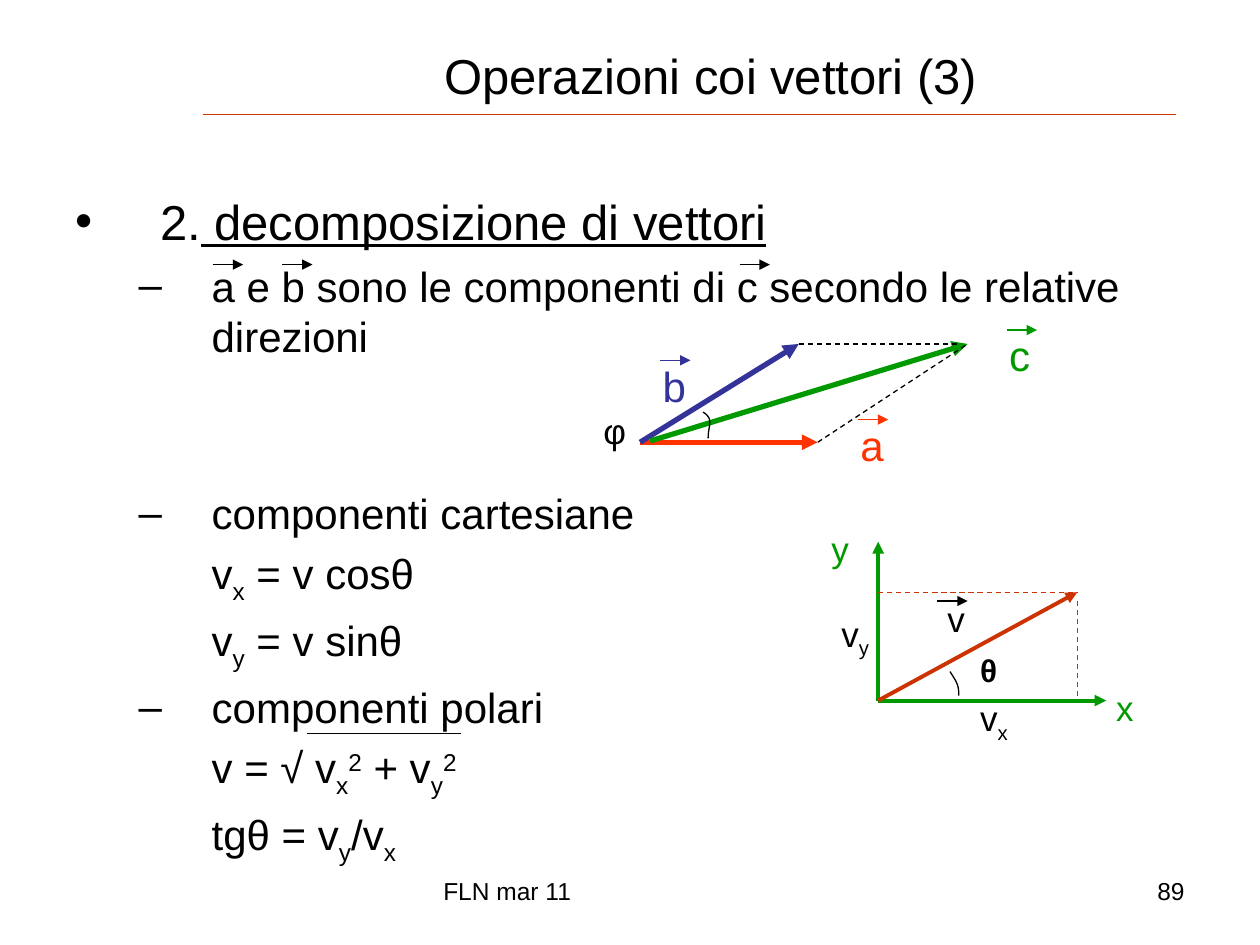
from lxml import etree
from pptx import Presentation
from pptx.dml.color import RGBColor
from pptx.enum.dml import MSO_LINE
from pptx.enum.shapes import MSO_CONNECTOR
from pptx.enum.text import MSO_ANCHOR, MSO_AUTO_SIZE, PP_ALIGN
from pptx.oxml.ns import qn
from pptx.util import Inches, Pt

STRAIGHT = MSO_CONNECTOR.STRAIGHT
DASH = MSO_LINE.DASH
MIDDLE = MSO_ANCHOR.MIDDLE
FIXED = MSO_AUTO_SIZE.NONE
LEFT, CENTER, RIGHT = PP_ALIGN.LEFT, PP_ALIGN.CENTER, PP_ALIGN.RIGHT

FONT = "Arial"
COLORS = {"black": "000000", "red": "FF3300", "blue": "333399",
          "green": "009900", "brick": "CC3300"}
SUB, SUP = -25, 30
VX = [("v",), ("x", SUB)]
VY = [("v",), ("y", SUB)]

# level, bullet, space before, size, runs
BODY = [
    (0, "•", 0, 28, [("2.",), (" decomposizione di vettori", 0, True)]),
    (1, "–", 5.5, 24, [("a e b sono le componenti di c secondo le relative direzioni",)]),
    (1, "–", 72.5, 24, [("componenti cartesiane",)]),
    (1, None, 5.5, 24, VX + [(" = v cosθ",)]),
    (1, None, 5.5, 24, VY + [(" = v sinθ",)]),
    (1, "–", 5.5, 24, [("componenti polari",)]),
    (1, None, 5.5, 24, [("v = √ v",), ("x", SUB), ("2", SUP),
                        (" + v",), ("y", SUB), ("2", SUP)]),
    (1, None, 5.5, 24, [("tgθ = v",), ("y", SUB), ("/v",), ("x", SUB)]),
]
INDENTS = [(0.67, 0.67), (1.08, 0.58)]


def rgb(name):
    return RGBColor.from_string(COLORS[name])


def add_run(para, size, color, text, base=0, under=False, bold=False):
    run = para.add_run()
    run.text = text
    font = run.font
    font.name, font.size, font.bold = FONT, Pt(size), bold
    font.color.rgb = rgb(color)
    if under:
        font.underline = True
    if base:
        font._element.set("baseline", str(base * 1000))


def place(shape, left, top, width, height):
    shape.left, shape.top = Inches(left), Inches(top)
    shape.width, shape.height = Inches(width), Inches(height)


def add_text(slide, box, runs, size, color="black", align=LEFT, wrap=False, bold=False):
    frame = slide.shapes.add_textbox(*map(Inches, box)).text_frame
    frame.word_wrap = wrap
    para = frame.paragraphs[0]
    para.alignment = align
    for run in runs:
        add_run(para, size, color, *run, bold=bold)


def add_line(slide, start, end, color="black", width=0.75, arrow=False, dash=False):
    line = slide.shapes.add_connector(STRAIGHT, *map(Inches, (*start, *end)))
    line.line.color.rgb = rgb(color)
    line.line.width = Pt(width)
    if dash:
        line.line.dash_style = DASH
    if arrow:
        etree.SubElement(line.line._get_or_add_ln(), qn("a:tailEnd"), type="triangle")
    etree.SubElement(line._element.spPr, qn("a:effectLst"))


def add_hat(slide, left, top, color="black"):
    """Draw the small arrow above a vector's name."""
    add_line(slide, (left, top), (left + 0.24, top), color, arrow=True)


def add_arc(slide, *knots, steps=12):
    """Draw a cubic curve through its four control points as an open outline."""
    dots = []
    for i in range(steps + 1):
        t = i / steps
        parts = ((1 - t) ** 3, 3 * t * (1 - t) ** 2, 3 * t * t * (1 - t), t ** 3)
        dots.append([Inches(sum(p * k[axis] for p, k in zip(parts, knots)))
                     for axis in (0, 1)])
    pen = slide.shapes.build_freeform(*dots[0])
    pen.add_line_segments(dots[1:], close=False)
    arc = pen.convert_to_shape()
    arc.shadow.inherit = False
    arc.fill.background()
    arc.line.color.rgb = rgb("black")
    arc.line.width = Pt(0.75)


def fill_title(slide):
    title = slide.shapes.title
    place(title, 1.85, 0.28, 7.58, 0.63)
    frame = title.text_frame
    frame.auto_size, frame.vertical_anchor = FIXED, MIDDLE
    para = frame.paragraphs[0]
    para.alignment = CENTER
    add_run(para, 28, "black", "Operazioni coi vettori (3)")


def fill_body(slide):
    body = slide.placeholders[1]
    place(body, 0.5, 1.47, 9, 5.23)
    frame = body.text_frame
    frame.auto_size, frame.word_wrap = FIXED, True
    for i, (level, mark, gap, size, runs) in enumerate(BODY):
        para = frame.add_paragraph() if i else frame.paragraphs[0]
        para.level = level
        para.space_before = Pt(gap)
        margin, hang = INDENTS[level]
        props = para._p.get_or_add_pPr()
        props.set("marL", str(Inches(margin)))
        props.set("indent", str(-Inches(hang) if mark else 0))
        if mark:
            etree.SubElement(props, qn("a:buChar"), char=mark)
        else:
            etree.SubElement(props, qn("a:buNone"))
        for run in runs:
            add_run(para, size, "black", *run)


def draw_sum(slide):
    """Draw the parallelogram of vectors a, b and c."""
    root, tip_a, tip_b, tip_c = (5.08, 3.51), (6.49, 3.51), (6.34, 2.73), (7.68, 2.73)
    add_line(slide, root, tip_a, "red", 3, arrow=True)
    add_line(slide, root, tip_b, "blue", 3, arrow=True)
    add_line(slide, (5.16, 3.5), tip_c, "green", 3, arrow=True)
    for name, left, top, color in (("b", 5.16, 2.81, "blue"),
                                   ("a", 6.73, 3.28, "red"),
                                   ("c", 7.91, 2.57, "green")):
        add_text(slide, (left, top, 0.39, 0.5), [(name,)], 24, color)
        add_hat(slide, left + 0.08, top + 0.05, color)
    add_line(slide, tip_b, (7.6, 2.73), dash=True)
    add_line(slide, tip_a, tip_c, dash=True)
    add_arc(slide, (5.58, 3.27), (5.67, 3.33), (5.62, 3.37), (5.62, 3.48))
    add_text(slide, (4.69, 3.2, 0.38, 0.43), [("φ",)], 20)


def draw_axes(slide):
    """Draw vector v and its parts along x and y."""
    root, tip = (6.97, 5.56), (8.55, 4.7)
    add_line(slide, root, (8.78, 5.56), "green", 2.25, arrow=True)
    add_line(slide, root, (6.97, 4.3), "green", 2.25, arrow=True)
    add_line(slide, root, tip, "brick", 2.25, arrow=True)
    add_line(slide, (8.55, 4.77), (8.55, 5.56), "brick", dash=True)
    add_line(slide, (6.97, 4.7), tip, "brick", dash=True)
    add_arc(slide, (7.54, 5.33), (7.59, 5.41), (7.61, 5.43), (7.61, 5.52))
    for runs, left, top, width, color in (([("x",)], 8.76, 5.4, 0.34, "green"),
                                          ([("y",)], 6.5, 4.14, 0.34, "green"),
                                          (VX, 7.68, 5.48, 0.43, "black"),
                                          (VY, 6.58, 4.81, 0.43, "black"),
                                          ([("v",)], 7.42, 4.69, 0.34, "black")):
        add_text(slide, (left, top, width, 0.43), runs, 20, color)
    add_text(slide, (7.68, 5.12, 0.34, 0.4), [("θ",)], 18, bold=True)
    add_hat(slide, 7.44, 4.77)


def main():
    prs = Presentation()
    prs.slide_width, prs.slide_height = Inches(10), Inches(7.5)
    slide = prs.slides.add_slide(prs.slide_layouts[1])
    add_line(slide, (1.61, 0.91), (9.33, 0.91), "brick")
    add_text(slide, (3.42, 6.9, 3.17, 0.45), [("FLN mar 11",)], 14, wrap=True)
    add_text(slide, (7.17, 6.9, 2.33, 0.45), [("89",)], 14, align=RIGHT, wrap=True)
    fill_title(slide)
    fill_body(slide)
    draw_sum(slide)
    draw_axes(slide)
    for left in (1.69, 2.24, 5.87):
        add_hat(slide, left, 2.1)
    add_line(slide, (2.44, 5.82), (3.66, 5.82))
    prs.save("out.pptx")


if __name__ == "__main__":
    main()
